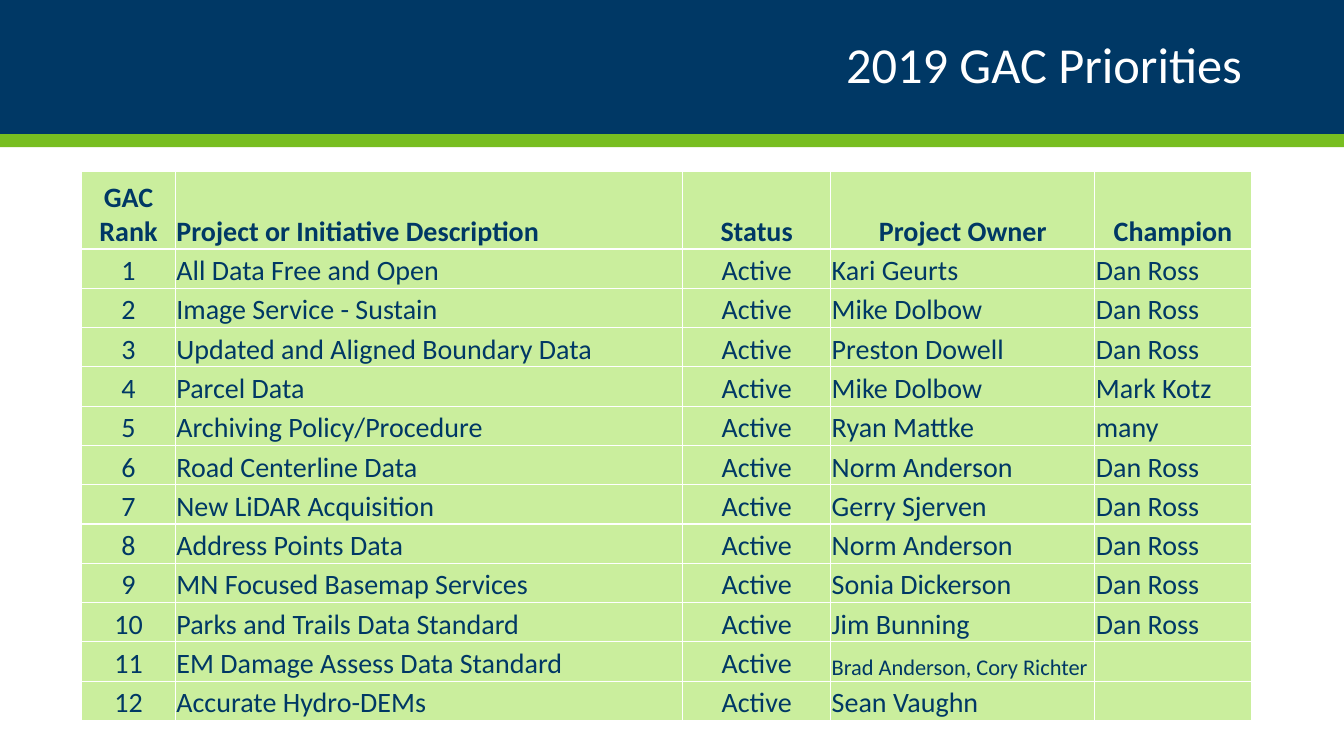
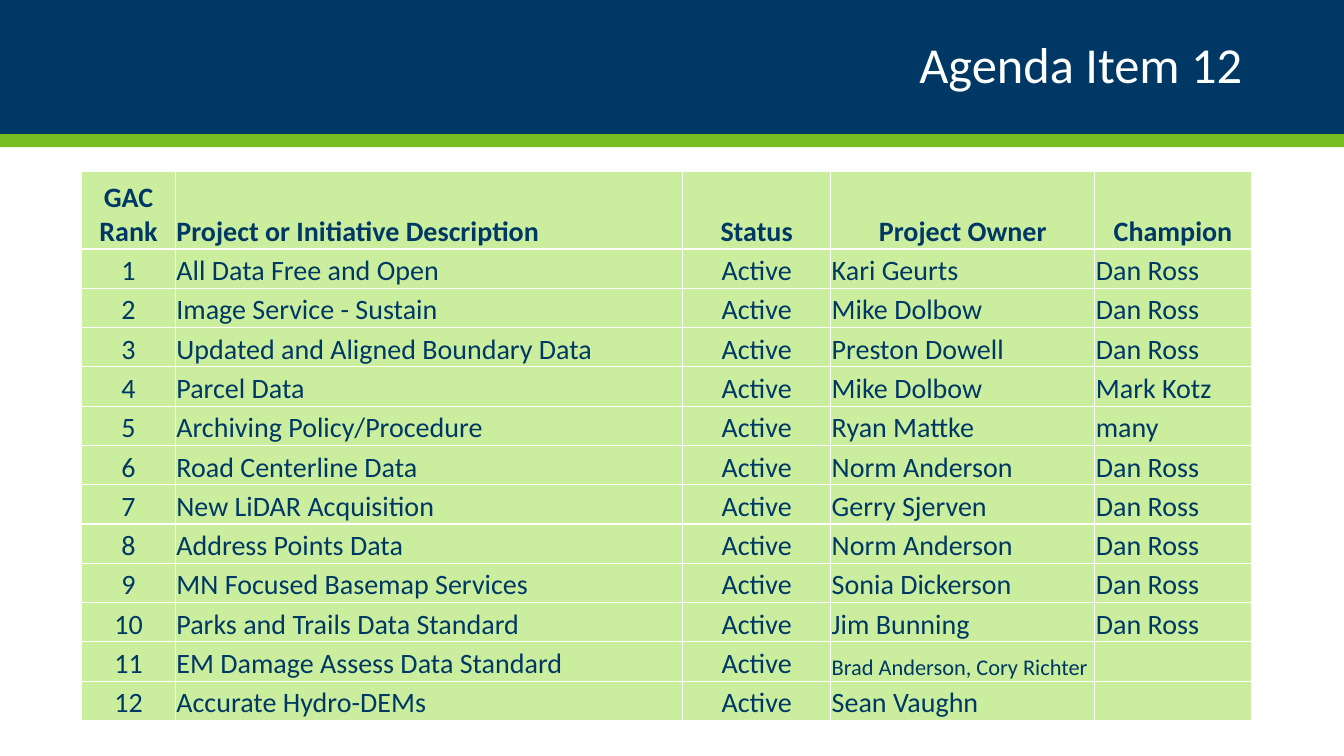
from lxml.etree import SubElement
from pptx import Presentation
from pptx.dml.color import RGBColor
from pptx.enum.shapes import MSO_SHAPE
from pptx.enum.text import MSO_ANCHOR, PP_ALIGN
from pptx.oxml.ns import qn
from pptx.util import Inches, Pt

NAVY = RGBColor(0x00, 0x38, 0x65)
GREEN = RGBColor(0x78, 0xBE, 0x21)
PALE_GREEN = RGBColor(0xCA, 0xEE, 0x9D)
WHITE = RGBColor(0xFF, 0xFF, 0xFF)
FONT = "Calibri"

SLIDE_WIDTH, SLIDE_HEIGHT = Inches(13.33), Inches(7.5)
COLUMN_WIDTHS = [0.93, 5.03, 1.47, 2.62, 1.55]
CENTERED_COLUMNS = {0, 2}
HEADER_HEIGHT, ROW_HEIGHT = 0.77, 0.39
TEXT_SIZE, SMALL_SIZE = 20, 16
LONG_OWNER = 20

HEADINGS = ("GAC Rank", "Project or Initiative Description", "Status", "Project Owner", "Champion")
PROJECTS = [
    ("All Data Free and Open", "Kari Geurts", "Dan Ross"),
    ("Image Service - Sustain", "Mike Dolbow", "Dan Ross"),
    ("Updated and Aligned Boundary Data", "Preston Dowell", "Dan Ross"),
    ("Parcel Data", "Mike Dolbow", "Mark Kotz"),
    ("Archiving Policy/Procedure", "Ryan Mattke", "many"),
    ("Road Centerline Data", "Norm Anderson", "Dan Ross"),
    ("New LiDAR Acquisition", "Gerry Sjerven", "Dan Ross"),
    ("Address Points Data", "Norm Anderson", "Dan Ross"),
    ("MN Focused Basemap Services", "Sonia Dickerson", "Dan Ross"),
    ("Parks and Trails Data Standard", "Jim Bunning", "Dan Ross"),
    ("EM Damage Assess Data Standard", "Brad Anderson, Cory Richter", ""),
    ("Accurate Hydro-DEMs", "Sean Vaughn", ""),
]
SLIDE_TITLES = ("2019 GAC Priorities", "Agenda Item 12")


def style_paragraph(paragraph, size, color, alignment, bold=False):
    """Set the font and alignment of one paragraph."""
    paragraph.alignment = alignment
    font = paragraph.font
    font.name, font.size, font.bold = FONT, Pt(size), bold
    font.color.rgb = color


def add_band(slide, left, top, width, height, color):
    """Add a plain filled rectangle."""
    band = slide.shapes.add_shape(MSO_SHAPE.RECTANGLE, left, top, width, height)
    band.shadow.inherit = False
    band.fill.solid()
    band.fill.fore_color.rgb = color
    band.line.fill.background()


def add_header(slide, title, left, top, width):
    """Add the navy band, its green rule and the right-aligned title."""
    band_height = Inches(1.33)
    add_band(slide, left, top, width, band_height, NAVY)
    add_band(slide, left, top + band_height, width, Inches(0.13), GREEN)
    title_box = slide.shapes.add_textbox(
        left + Inches(0.92), top + Inches(0.17), Inches(11.5), Inches(1))
    frame = title_box.text_frame
    frame.word_wrap = True
    frame.vertical_anchor = MSO_ANCHOR.MIDDLE
    paragraph = frame.paragraphs[0]
    paragraph.text = title
    paragraph.line_spacing = 0.9
    style_paragraph(paragraph, 36, WHITE, PP_ALIGN.RIGHT)


def add_borders(cell):
    """Draw a thin white line on every side of a cell."""
    properties = cell._tc.get_or_add_tcPr()
    for side in ("a:lnL", "a:lnR", "a:lnT", "a:lnB"):
        line = SubElement(properties, qn(side), w=str(Pt(1)))
        fill = SubElement(line, qn("a:solidFill"))
        SubElement(fill, qn("a:srgbClr"), val=str(WHITE))


def fill_cell(cell, text, size, alignment, bold):
    """Write and style one table cell."""
    add_borders(cell)
    cell.fill.solid()
    cell.fill.fore_color.rgb = PALE_GREEN
    cell.margin_left = cell.margin_right = cell.margin_top = Inches(0.01)
    cell.margin_bottom = 0
    cell.vertical_anchor = MSO_ANCHOR.BOTTOM
    paragraph = cell.text_frame.paragraphs[0]
    if text:
        paragraph.text = text
    style_paragraph(paragraph, size, NAVY, alignment, bold)


def add_priorities_table(slide, left, top):
    """Add the ranked project table with its top left corner at the given point."""
    rows = [HEADINGS] + [
        (str(rank), project, "Active", owner, champion)
        for rank, (project, owner, champion) in enumerate(PROJECTS, 1)]
    heights = [HEADER_HEIGHT] + [ROW_HEIGHT] * len(PROJECTS)
    table = slide.shapes.add_table(
        len(rows), len(HEADINGS), left, top,
        Inches(sum(COLUMN_WIDTHS)), Inches(sum(heights))).table
    table.first_row = table.horz_banding = False
    for column, width in zip(table.columns, COLUMN_WIDTHS):
        column.width = Inches(width)
    for row_index, (values, height) in enumerate(zip(rows, heights)):
        table.rows[row_index].height = Inches(height)
        is_header = row_index == 0
        for column_index, text in enumerate(values):
            centered = column_index in CENTERED_COLUMNS or (is_header and column_index != 1)
            is_long_owner = column_index == 3 and len(text) > LONG_OWNER
            fill_cell(
                table.cell(row_index, column_index), text,
                SMALL_SIZE if is_long_owner else TEXT_SIZE,
                PP_ALIGN.CENTER if centered else PP_ALIGN.LEFT, is_header)


def add_priorities_slide(presentation, title):
    """Add one slide with the header and the priorities table."""
    slide = presentation.slides.add_slide(presentation.slide_layouts[6])
    add_header(slide, title, 0, 0, SLIDE_WIDTH)
    add_priorities_table(slide, Inches(0.81), Inches(1.7))


def main():
    """Build and save the presentation."""
    presentation = Presentation()
    presentation.slide_width, presentation.slide_height = SLIDE_WIDTH, SLIDE_HEIGHT
    for title in SLIDE_TITLES:
        add_priorities_slide(presentation, title)
    presentation.save("out.pptx")


if __name__ == "__main__":
    main()
